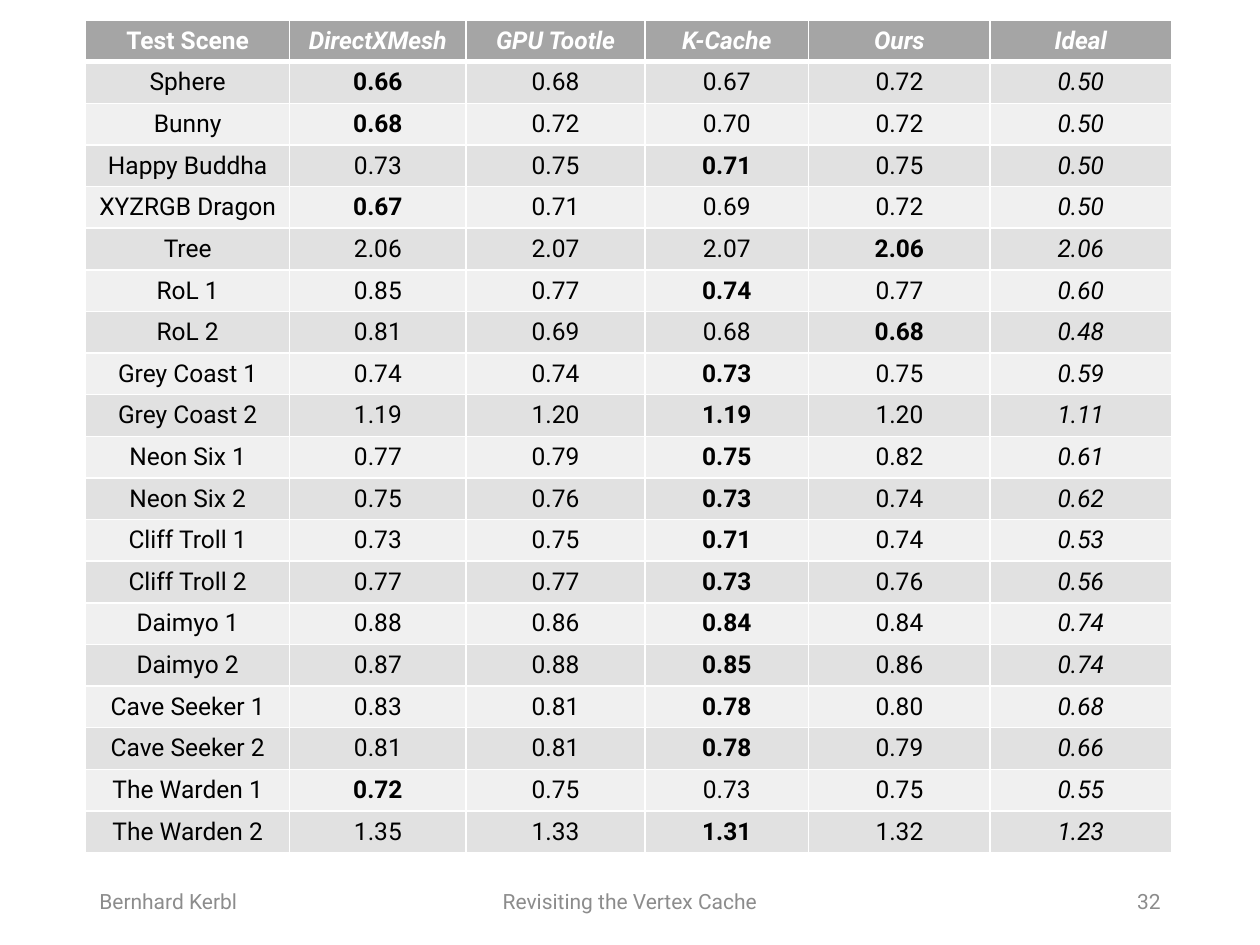
from lxml import etree
from pptx import Presentation
from pptx import util as u
from pptx.dml.color import RGBColor
from pptx.enum import text
from pptx.oxml import ns

HEAD = ["Test Scene", "DirectXMesh", "GPU Tootle", "K-Cache", "Ours", "Ideal"]
WIDTHS = [1.62, 1.4, 1.42, 1.3, 1.44, 1.44]
SCENES = [
    ("Sphere", 1, "0.66 0.68 0.67 0.72 0.50"),
    ("Bunny", 1, "0.68 0.72 0.70 0.72 0.50"),
    ("Happy Buddha", 3, "0.73 0.75 0.71 0.75 0.50"),
    ("XYZRGB Dragon", 1, "0.67 0.71 0.69 0.72 0.50"),
    ("Tree", 4, "2.06 2.07 2.07 2.06 2.06"),
    ("RoL 1", 3, "0.85 0.77 0.74 0.77 0.60"),
    ("RoL 2", 4, "0.81 0.69 0.68 0.68 0.48"),
    ("Grey Coast 1", 3, "0.74 0.74 0.73 0.75 0.59"),
    ("Grey Coast 2", 3, "1.19 1.20 1.19 1.20 1.11"),
    ("Neon Six 1", 3, "0.77 0.79 0.75 0.82 0.61"),
    ("Neon Six 2", 3, "0.75 0.76 0.73 0.74 0.62"),
    ("Cliff Troll 1", 3, "0.73 0.75 0.71 0.74 0.53"),
    ("Cliff Troll 2", 3, "0.77 0.77 0.73 0.76 0.56"),
    ("Daimyo 1", 3, "0.88 0.86 0.84 0.84 0.74"),
    ("Daimyo 2", 3, "0.87 0.88 0.85 0.86 0.74"),
    ("Cave Seeker 1", 3, "0.83 0.81 0.78 0.80 0.68"),
    ("Cave Seeker 2", 3, "0.81 0.81 0.78 0.79 0.66"),
    ("The Warden 1", 1, "0.72 0.75 0.73 0.75 0.55"),
    ("The Warden 2", 3, "1.35 1.33 1.31 1.32 1.23"),
]


def color(code):
    """Turn a hex string into a colour."""
    return RGBColor.from_string(code)


def style(para, size, code, align, bold=False, italic=False):
    """Format a paragraph and its runs."""
    para.alignment = align
    for run in para.runs:
        font = run.font
        font.name, font.size = "Roboto", u.Pt(size)
        font.bold, font.italic = bold, italic
        font.color.rgb = color(code)


def edge(cell, top, bottom):
    """Draw white borders, with the top and bottom widths in points."""
    props = cell._tc.get_or_add_tcPr()
    sides = [("lnL", 1), ("lnR", 1), ("lnT", top), ("lnB", bottom)]
    for spot, (side, width) in enumerate(sides):
        line = etree.Element(ns.qn("a:" + side), w=str(u.Pt(width)))
        fill = etree.SubElement(line, ns.qn("a:solidFill"))
        etree.SubElement(fill, ns.qn("a:srgbClr"), val="FFFFFF")
        props.insert(spot, line)


def scores(slide, left, top, width, height):
    """Place the table of scenes, with the best score of each row in bold."""
    rows = [(HEAD[0], 0, HEAD[1:])]
    rows += [(name, best, vals.split()) for name, best, vals in SCENES]
    frame = slide.shapes.add_table(len(rows), len(HEAD), left, top, width, height)
    table = frame.table
    for col, share in zip(table.columns, WIDTHS):
        col.width = int(width * share / sum(WIDTHS))
    for r, (name, best, vals) in enumerate(rows):
        head = r == 0
        back = "A5A5A5" if head else ("F0F0F0", "E1E1E1")[r % 2]
        for c, word in enumerate([name, *vals]):
            cell = table.cell(r, c)
            cell.text_frame.text = word
            cell.fill.solid()
            cell.fill.fore_color.rgb = color(back)
            edge(cell, 3 if r == 1 else 1, 3 if head else 1)
            style(cell.text_frame.paragraphs[0], 14,
                  "FFFFFF" if head else "000000", text.PP_ALIGN.CENTER,
                  bold=head or c == best,
                  italic=c > 0 if head else c == len(HEAD) - 1)


def footer(slide, left, top, width, height):
    """Place the author, the title and the page number in one line."""
    side, mid = u.Inches(2.25), u.Inches(3.38)
    parts = [
        ("Bernhard Kerbl", 0, side, text.PP_ALIGN.LEFT),
        ("Revisiting the Vertex Cache", (width - mid) // 2, mid, text.PP_ALIGN.CENTER),
        ("32", width - side, side, text.PP_ALIGN.RIGHT),
    ]
    for word, shift, span, align in parts:
        frame = slide.shapes.add_textbox(left + shift, top, span, height).text_frame
        frame.word_wrap = True
        frame.vertical_anchor = text.MSO_ANCHOR.MIDDLE
        frame.text = word
        style(frame.paragraphs[0], 12, "8C8C8C", align)


def main():
    """Build the slide and save it."""
    deck = Presentation()
    deck.slide_width, deck.slide_height = u.Inches(10), u.Inches(7.5)
    slide = deck.slides.add_slide(deck.slide_layouts[6])
    scores(slide, u.Inches(0.68), u.Inches(0.16), u.Inches(8.62), u.Inches(6.6))
    footer(slide, u.Inches(0.69), u.Inches(6.95), u.Inches(8.62), u.Inches(0.4))
    deck.save("out.pptx")


if __name__ == "__main__":
    main()
